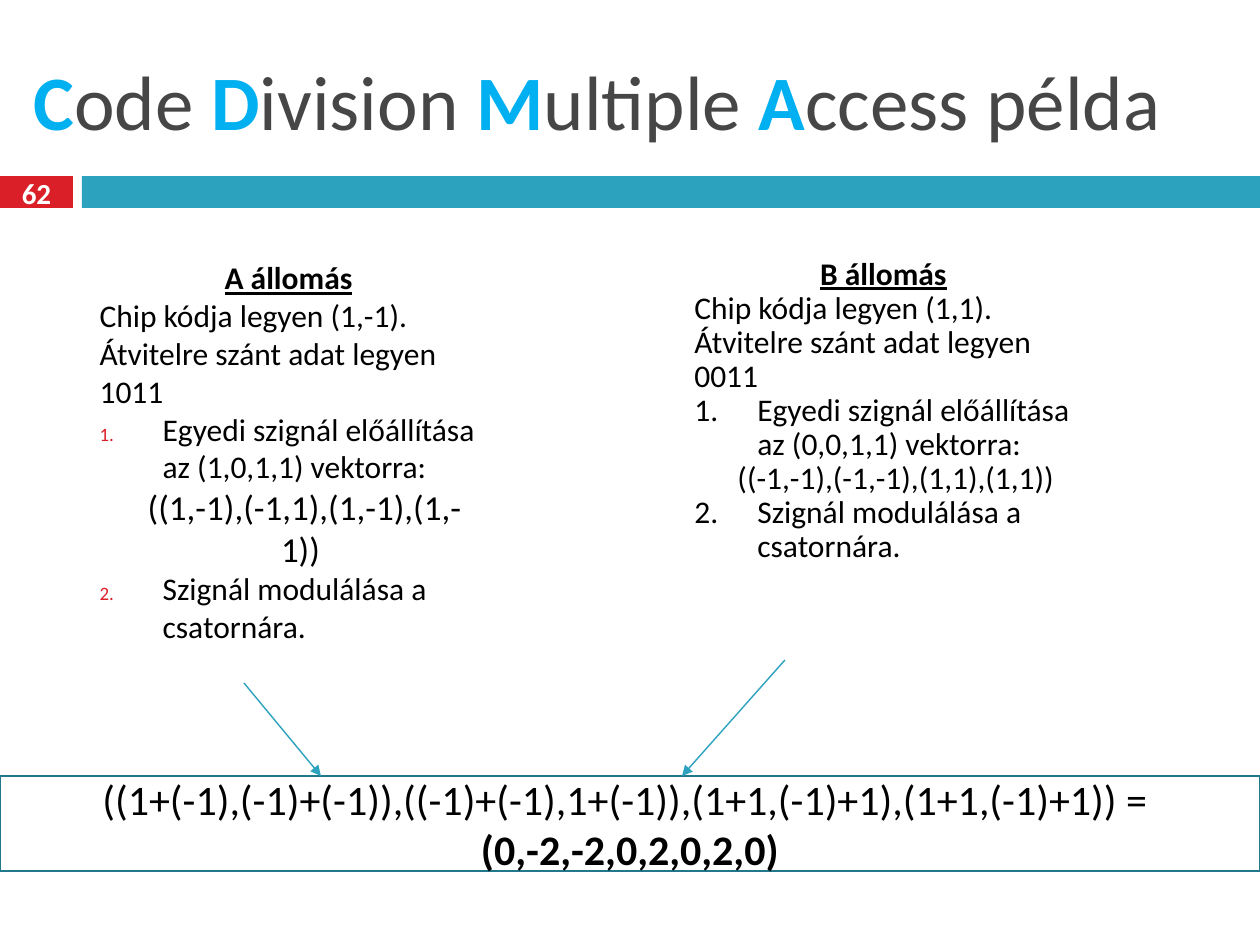
import pptx
import pptx.dml.color
import pptx.enum.shapes
import pptx.enum.text
import pptx.oxml.ns
import pptx.util
from lxml import etree

RGBColor = pptx.dml.color.RGBColor
ALIGN = pptx.enum.text.PP_ALIGN
ANCHOR = pptx.enum.text.MSO_ANCHOR
SHAPE = pptx.enum.shapes.MSO_SHAPE
qn = pptx.oxml.ns.qn

BLACK = RGBColor(0x00, 0x00, 0x00)
WHITE = RGBColor(0xFF, 0xFF, 0xFF)
GREY = RGBColor(0x46, 0x46, 0x46)
SKY = RGBColor(0x00, 0xB0, 0xF0)
RED = RGBColor(0xDA, 0x1F, 0x28)
TEAL = RGBColor(0x2D, 0xA2, 0xBF)
DARK_TEAL = RGBColor(0x21, 0x78, 0x8D)
FONT = "Calibri"


def px(length):
    """Turn pixels into EMU at 126 pixels to the inch."""
    return pptx.util.Emu(round(length * 914400 / 126))


def apply(target, values):
    """Set every attribute in values on target."""
    for name, value in values.items():
        setattr(target, name, value)


def place(shape, box):
    """Move and size a shape to a pixel box."""
    apply(shape, dict(zip(("left", "top", "width", "height"), map(px, box))))


def add_run(paragraph, text, size, color=BLACK, **style):
    """Append a formatted run to a paragraph."""
    run = paragraph.add_run()
    run.text = text
    apply(run.font, {"name": FONT, "size": pptx.util.Pt(size), **style})
    run.font.color.rgb = color


def add_rectangle(slide, box, fill=None, outline=None):
    """Draw a flat rectangle with an optional fill and outline."""
    rectangle = slide.shapes.add_shape(SHAPE.RECTANGLE, *map(px, box))
    rectangle.shadow.inherit = False
    if fill is None:
        rectangle.fill.background()
    else:
        rectangle.fill.solid()
        rectangle.fill.fore_color.rgb = fill
    if outline is None:
        rectangle.line.fill.background()
    else:
        rectangle.line.color.rgb = outline
        rectangle.line.width = pptx.util.Pt(1.5)
    return rectangle


def set_bullet(paragraph, indent, hanging, number=None, color=None):
    """Set a paragraph's indent in pixels and its number, if any."""
    properties = paragraph._p.get_or_add_pPr()
    properties.set("marL", str(px(indent)))
    properties.set("indent", str(-px(hanging)))
    if number is None:
        etree.SubElement(properties, qn("a:buNone"))
        return
    if color is not None:
        bullet_color = etree.SubElement(properties, qn("a:buClr"))
        etree.SubElement(bullet_color, qn("a:srgbClr"), val=str(color))
        etree.SubElement(properties, qn("a:buSzPct"), val="60000")
    etree.SubElement(properties, qn("a:buFont"), typeface=FONT)
    etree.SubElement(properties, qn("a:buAutoNum"), type="arabicPeriod", startAt=str(number))


def title_region(title, box):
    """Write the title with its initials picked out."""
    place(title, box)
    apply(title.text_frame, {"vertical_anchor": ANCHOR.MIDDLE, "word_wrap": True,
                             "auto_size": pptx.enum.text.MSO_AUTO_SIZE.NONE})
    heading = title.text_frame.paragraphs[0]
    heading.alignment = ALIGN.LEFT
    for word in ("Code ", "Division ", "Multiple ", "Access példa"):
        add_run(heading, word[0], 44, SKY, bold=True)
        add_run(heading, word[1:], 44, GREY, bold=False)


def number_band(slide, box, number):
    """Draw the band with the slide number at its left end."""
    left, top, width, height = box
    tab, gap = 73, 9
    add_rectangle(slide, (left, top, tab, height), RED)
    add_rectangle(slide, (left + tab + gap, top, width - tab - gap, height), TEAL)
    label = slide.shapes.add_textbox(*map(px, (left, top - 4, tab, height + 10)))
    apply(label.text_frame, {"word_wrap": True, "vertical_anchor": ANCHOR.MIDDLE})
    label.text_frame.paragraphs[0].alignment = ALIGN.CENTER
    add_run(label.text_frame.paragraphs[0], number, 16.6, WHITE, bold=True)


def station_region(holder, box, station, spacing, signal_size, number_color=None):
    """Fill one station's column with its code, data and steps."""
    place(holder, box)
    name, chip, data, vector, signal = station
    frame = holder.text_frame
    apply(frame, {"word_wrap": True, "vertical_anchor": ANCHOR.TOP,
                  "auto_size": pptx.enum.text.MSO_AUTO_SIZE.NONE})
    plain, step = (0, 0), (63, 63)
    lines = [
        (f"{name} állomás", ALIGN.CENTER, 18, plain, {"bold": True, "underline": True}),
        (f"Chip kódja legyen {chip}.", ALIGN.LEFT, 18, plain, {}),
        (f"Átvitelre szánt adat legyen {data}", ALIGN.LEFT, 18, plain, {}),
        (f"Egyedi szignál előállítása az {vector} vektorra:", ALIGN.LEFT, 18,
         (*step, 1, number_color), {}),
        (f"{signal} ", ALIGN.CENTER, signal_size, (32, 0), {}),
        ("Szignál modulálása a csatornára.", ALIGN.LEFT, 18, (*step, 2, number_color), {}),
    ]
    for index, (text, alignment, size, bullet, style) in enumerate(lines):
        paragraph = frame.add_paragraph() if index else frame.paragraphs[0]
        apply(paragraph, {"alignment": alignment, "line_spacing": spacing,
                          "space_before": pptx.util.Pt(0), "space_after": pptx.util.Pt(0)})
        set_bullet(paragraph, *bullet)
        add_run(paragraph, text, size, **style)


def sum_region(slide, box):
    """Draw the outlined box with the summed signal."""
    total = add_rectangle(slide, box, outline=DARK_TEAL)
    apply(total.text_frame, {"word_wrap": True, "vertical_anchor": ANCHOR.MIDDLE})
    formula = total.text_frame.paragraphs[0]
    formula.alignment = ALIGN.CENTER
    add_run(formula, "((1+(-1),(-1)+(-1)),((-1)+(-1),1+(-1)),(1+1,(-1)+1),(1+1,(-1)+1)) = ", 24)
    formula.add_line_break()
    add_run(formula, "(0,-2,-2,0,2,0,2,0)", 24, bold=True)


def signal_arrow(slide, start, end):
    """Draw an arrow from a station to the sum."""
    arrow = slide.shapes.add_connector(
        pptx.enum.shapes.MSO_CONNECTOR.STRAIGHT, *map(px, (*start, *end)))
    arrow.line.color.rgb = TEAL
    arrow.line.width = pptx.util.Pt(0.79)
    etree.SubElement(arrow.line._get_or_add_ln(), qn("a:tailEnd"), type="triangle")
    etree.SubElement(arrow._element.spPr, qn("a:effectLst"))


def main():
    """Build and save the slide."""
    deck = pptx.Presentation()
    apply(deck, {"slide_width": px(1260), "slide_height": px(945)})
    slide = deck.slides.add_slide(deck.slide_layouts[1])
    number_band(slide, (0, 176, 1260, 32), "62")
    title_region(slide.shapes.title, (21, 32, 1218, 136))

    station_a = ("A", "(1,-1)", "1011", "(1,0,1,1)", "((1,-1),(-1,1),(1,-1),(1,-1))")
    station_b = ("B", "(1,1)", "0011", "(0,0,1,1)", "((-1,-1),(-1,-1),(1,1),(1,1))")
    column_a, column_b = (87, 252, 403, 281), (682, 252, 403, 281)
    station_region(slide.placeholders[1], column_a, station_a, 1.0, 20, RED)
    station_region(slide.shapes.add_textbox(*map(px, column_b)), column_b, station_b, 0.9, 18)

    sum_region(slide, (0, 776, 1260, 95))
    for start, end in (((244, 683), (321, 776)), ((785, 660), (682, 776))):
        signal_arrow(slide, start, end)
    deck.save("out.pptx")


if __name__ == "__main__":
    main()
